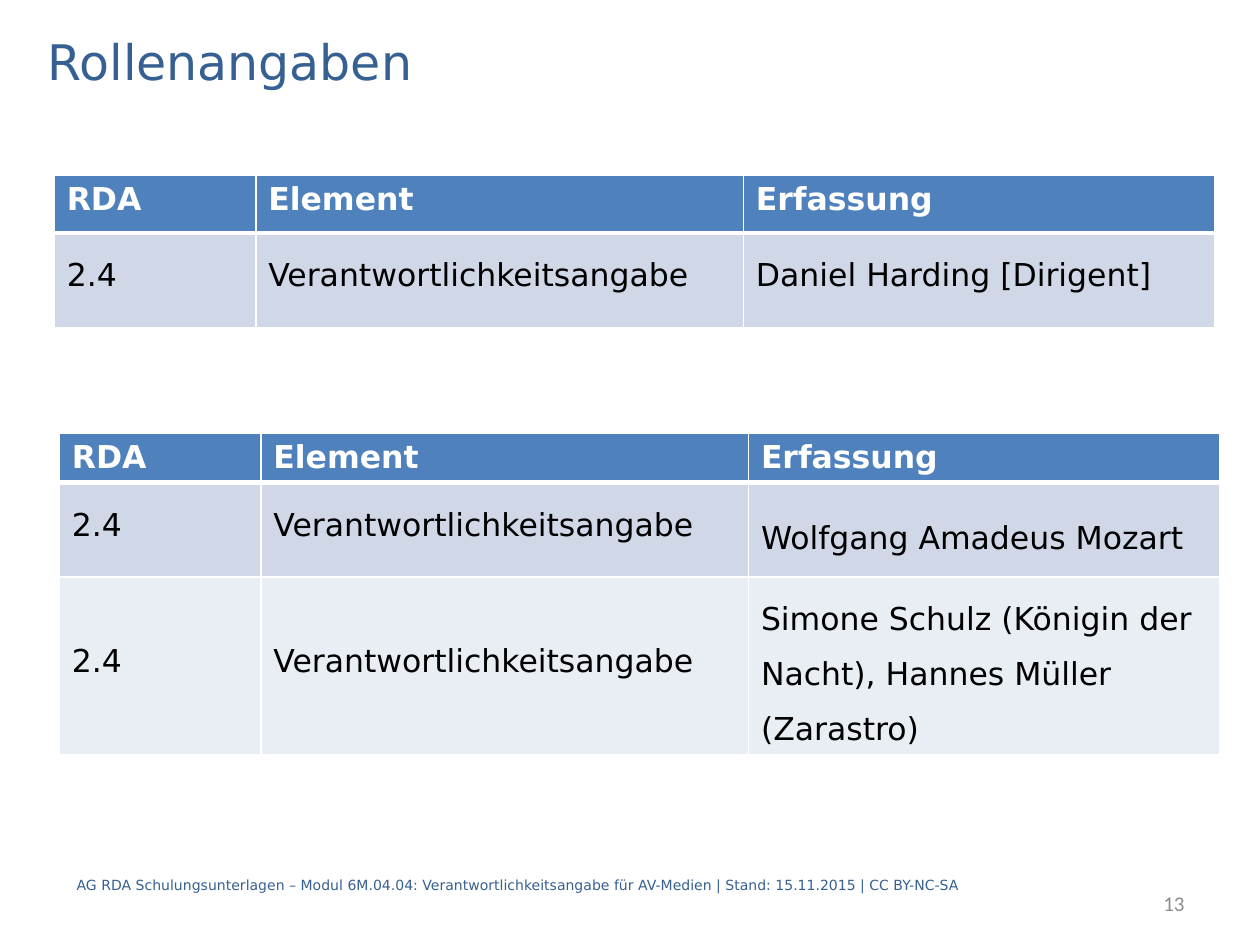
from lxml import etree
from pptx import Presentation
from pptx.dml.color import RGBColor
from pptx.enum.text import MSO_ANCHOR as Anchor, MSO_AUTO_SIZE as AutoSize, PP_ALIGN as Align
from pptx.oxml import parse_xml
from pptx.oxml.ns import qn
from pptx.util import Inches, Pt

THEME = {
    "font": "DejaVu Sans", "number_font": "Calibri",
    "blue": "376092", "header": "4F81BD", "bands": ["D0D8E8", "E9EDF4"],
    "white": "FFFFFF", "black": "000000", "gray": "8C8C8C",
    "title": 28, "table": 18, "footer": 8, "number": 12,
}


def style(para, size, color, font=THEME["font"], bold=False):
    para.font.name = font
    para.font.size = Pt(size)
    para.font.bold = bold
    para.font.color.rgb = RGBColor.from_string(color)


def add_border(cell, side, points):
    props = cell._tc.get_or_add_tcPr()
    line = etree.SubElement(props, qn(f"a:ln{side}"), w=str(Pt(points)))
    fill = etree.SubElement(line, qn("a:solidFill"))
    etree.SubElement(fill, qn("a:srgbClr"), val=THEME["white"])


deck = Presentation()
deck.slide_width, deck.slide_height = Inches(10), Inches(7.5)
page = deck.slides.add_slide(deck.slide_layouts[5])

# Title
title = page.shapes.title
title.left, title.top = Inches(0.28), Inches(0.2)
title.width, title.height = Inches(9.45), Inches(0.56)
title.text_frame.text = "Rollenangaben"
title.text_frame.auto_size = AutoSize.NONE
title.text_frame.vertical_anchor = Anchor.MIDDLE
title.text_frame.paragraphs[0].alignment = Align.LEFT
style(title.text_frame.paragraphs[0], THEME["title"], THEME["blue"])

# Tables: left, top, row heights, line spacing of the last column, entries
HEADINGS = ["RDA", "Element", "Erfassung"]
COLUMN_WIDTHS = [1.6, 3.87, 3.74]
TABLES = [
    (0.43, 1.39, [0.46, 0.75], Pt(16), ["Daniel Harding [Dirigent]"]),
    (0.47, 3.44, [0.15, 0.75, 0.75], 1.5,
     ["Wolfgang Amadeus Mozart",
      "Simone Schulz (Königin der Nacht), Hannes Müller (Zarastro)"]),
]
for left, top, heights, entry_spacing, entries in TABLES:
    rows = [HEADINGS] + [["2.4", "Verantwortlichkeitsangabe", entry] for entry in entries]
    table = page.shapes.add_table(
        len(rows), len(HEADINGS), Inches(left), Inches(top),
        Inches(sum(COLUMN_WIDTHS)), Inches(sum(heights))).table
    for column, width in zip(table.columns, COLUMN_WIDTHS):
        column.width = Inches(width)
    for r, (row, height) in enumerate(zip(rows, heights)):
        table.rows[r].height = Inches(height)
        for c, text in enumerate(row):
            cell = table.cell(r, c)
            cell.text = text
            para = cell.text_frame.paragraphs[0]
            # A thick line parts the header from the body
            for side, points in zip("LRTB", [1, 1, 3 if r == 1 else 1, 3 if r == 0 else 1]):
                add_border(cell, side, points)
            cell.fill.solid()
            if r == 0:
                fill = THEME["header"]
                style(para, THEME["table"], THEME["white"], bold=True)
            else:
                fill = THEME["bands"][(r - 1) % 2]
                style(para, THEME["table"], THEME["black"])
                cell.vertical_anchor = Anchor.MIDDLE
                para.space_before = para.space_after = Pt(6)
                para.line_spacing = entry_spacing if c == 2 else Pt(16)
            cell.fill.fore_color.rgb = RGBColor.from_string(fill)

# Footer
footer = page.shapes.add_textbox(Inches(0.51), Inches(6.82), Inches(8.74), Inches(0.4))
footer.text_frame.word_wrap = True
footer.text_frame.vertical_anchor = Anchor.MIDDLE
para = footer.text_frame.paragraphs[0]
para.text = ("AG RDA Schulungsunterlagen – Modul 6M.04.04: Verantwortlichkeitsangabe "
             "für AV-Medien | Stand: 15.11.2015 | CC BY-NC-SA")
style(para, THEME["footer"], THEME["blue"])

# Page number
number = page.shapes.add_textbox(Inches(7.91), Inches(6.97), Inches(1.59), Inches(0.4))
number.text_frame.word_wrap = True
number.text_frame.vertical_anchor = Anchor.MIDDLE
para = number.text_frame.paragraphs[0]
para.text = "13"
para.alignment = Align.RIGHT
style(para, THEME["number"], THEME["gray"], THEME["number_font"])

deck.save("out.pptx")
